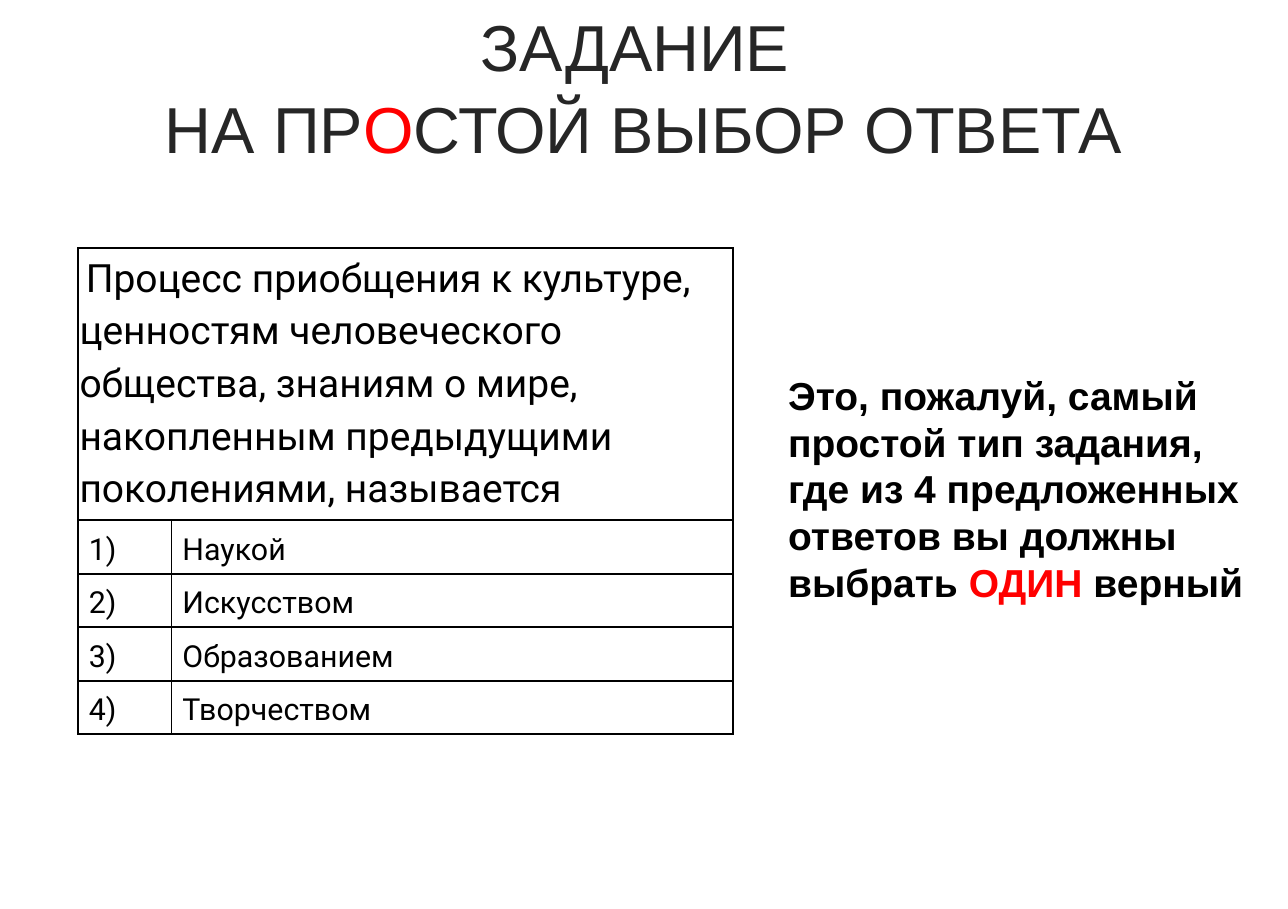
from pptx import Presentation, util as u
from pptx.dml.color import RGBColor
from pptx.enum import text
from pptx.oxml.ns import qn
from lxml import etree

COLORS = {"title": "262626", "ink": "000000", "accent": "FF0000"}
WIDE, HIGH = u.Inches(8.26), u.Inches(5.83)
QUESTION = ("Процесс приобщения к культуре, ценностям человеческого общества, "
            "знаниям о мире, накопленным предыдущими поколениями, называется")
ANSWERS = ["Наукой", "Искусством", "Образованием", "Творчеством"]


def share(x, y, w, h):
    """Turn shares of the slide into a box of lengths."""
    return [round(WIDE * x), round(HIGH * y), round(WIDE * w), round(HIGH * h)]


def style(para, font, size, bold=False):
    para.font.name, para.font.size, para.font.bold = font, u.Pt(size), bold


def write(frame, lines, size, ink, bold=False):
    """Fill a frame with lines made of (words, is accent) pairs."""
    frame.word_wrap = True
    frame.auto_size = text.MSO_AUTO_SIZE.NONE
    for i, line in enumerate(lines):
        para = frame.add_paragraph() if i else frame.paragraphs[0]
        style(para, "Arial", size, bold)
        for words, accent in line:
            run = para.add_run()
            run.text = words
            run.font.color.rgb = RGBColor.from_string(
                COLORS["accent" if accent else ink])


def add_title(slide, box):
    title = slide.shapes.title
    title.left, title.top, title.width, title.height = box
    frame = title.text_frame
    frame.vertical_anchor = text.MSO_ANCHOR.MIDDLE
    write(frame, [[("ЗАДАНИЕ ", False)],
                  [("НА ПР", False), ("О", True),
                   ("СТОЙ ВЫБОР ОТВЕТА", False)]], 30, "title")
    for para in frame.paragraphs:
        para.alignment = text.PP_ALIGN.CENTER
    frame.paragraphs[1].space_before = u.Pt(2)


def add_note(slide, box):
    frame = slide.shapes.add_textbox(*box).text_frame
    write(frame, [[("Это, пожалуй, самый простой тип задания,", False)],
                  [("где из 4 предложенных ответов вы должны выбрать ", False),
                   ("ОДИН ", True), ("верный", False)]], 18, "ink", True)


def outline(cell):
    props = cell._tc.get_or_add_tcPr()
    for i, side in enumerate(("a:lnL", "a:lnR", "a:lnT", "a:lnB")):
        line = etree.Element(qn(side), w=str(u.Pt(1)))
        fill = etree.SubElement(line, qn("a:solidFill"))
        etree.SubElement(fill, qn("a:srgbClr"), val=COLORS["ink"])
        props.insert(i, line)


def fill_cell(cell, words, size, inset, anchor):
    cell.text = words
    cell.vertical_anchor = anchor
    cell.margin_left = cell.margin_right = u.Inches(inset)
    cell.margin_top = cell.margin_bottom = u.Inches(inset)
    para = cell.text_frame.paragraphs[0]
    style(para, "Roboto", size)
    para.font.color.rgb = RGBColor.from_string(COLORS["ink"])
    para.line_spacing = 1.15
    para._p.get_or_add_pPr().set("indent", str(u.Inches(0.04)))


def add_quiz(slide, box):
    """Place the question over its numbered answers."""
    table = slide.shapes.add_table(len(ANSWERS) + 1, 2, *box).table
    table.first_row = table.horz_banding = False
    wide, high = box[2:]
    for col, part in zip(table.columns, (1 / 7, 6 / 7)):
        col.width = round(wide * part)
    for row, part in zip(table.rows, (0.56, 0.11, 0.11, 0.11, 0.11)):
        row.height = round(high * part)
    for cell in table.iter_cells():
        cell.fill.background()
        outline(cell)
    head = table.cell(0, 0)
    head.merge(table.cell(0, 1))
    fill_cell(head, QUESTION, 18, 0.01, text.MSO_ANCHOR.TOP)
    for i, answer in enumerate(ANSWERS, 1):
        for j, words in enumerate((f"{i})", answer)):
            fill_cell(table.cell(i, j), words, 14, 0.03, text.MSO_ANCHOR.MIDDLE)


def main():
    deck = Presentation()
    deck.slide_width, deck.slide_height = WIDE, HIGH
    slide = deck.slides.add_slide(deck.slide_layouts[5])
    add_title(slide, share(0, 0, 1, 0.19))
    add_note(slide, share(0.6, 0.4, 0.38, 0.38))
    add_quiz(slide, [u.Inches(n) for n in (0.5, 1.59, 4.2, 3.12)])
    deck.save("out.pptx")


if __name__ == "__main__":
    main()
